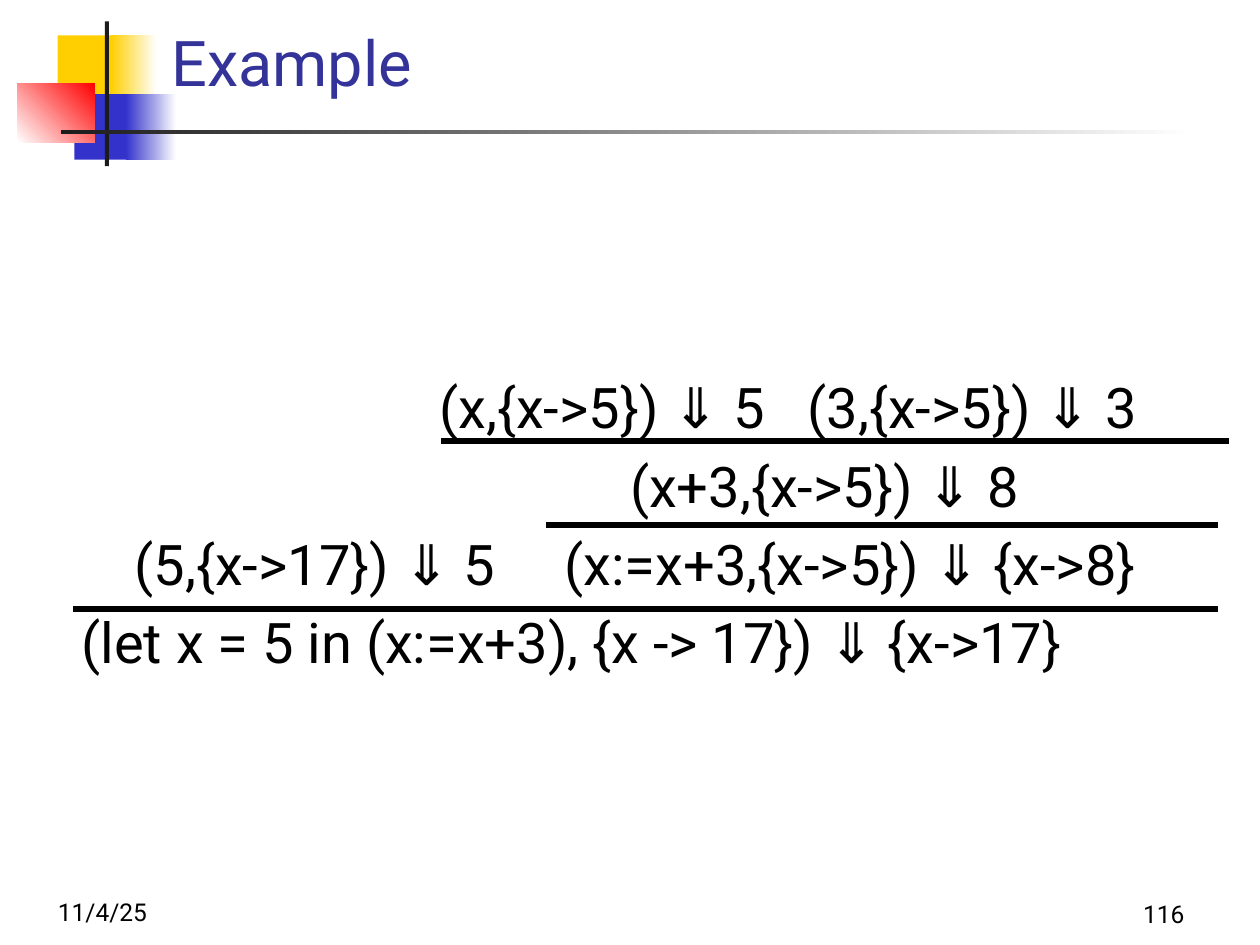
from lxml import etree
from pptx import Presentation
from pptx.dml.color import RGBColor
from pptx.enum.shapes import MSO_CONNECTOR, MSO_SHAPE
from pptx.enum.text import MSO_ANCHOR, MSO_AUTO_SIZE, PP_ALIGN
from pptx.oxml.ns import qn
from pptx.util import Pt

LINE = MSO_CONNECTOR.STRAIGHT
RECT = MSO_SHAPE.RECTANGLE
TOP, BOTTOM = MSO_ANCHOR.TOP, MSO_ANCHOR.BOTTOM
LEFT, RIGHT = PP_ALIGN.LEFT, PP_ALIGN.RIGHT
NO_FIT = MSO_AUTO_SIZE.NONE

FONT = "Roboto"
COLORS = {
    "yellow": "FFCF01", "blue": "3333CC", "red": "FF0000",
    "white": "FFFFFF", "dark": "1C1C1C", "title": "333399", "text": "000000",
}


def rgb(name):
    return RGBColor.from_string(COLORS[name])


def write(sp, text, size, color="text", anchor=BOTTOM, align=LEFT):
    tf = sp.text_frame
    tf.auto_size = NO_FIT
    tf.word_wrap = True
    tf.vertical_anchor = anchor
    p = tf.paragraphs[0]
    p.alignment = align
    r = p.add_run()
    r.text = text
    r.font.name = FONT
    r.font.size = Pt(size)
    r.font.color.rgb = rgb(color)
    return tf


def add_text(s, box, text, size, **style):
    sp = s.shapes.add_textbox(*map(Pt, box))
    return write(sp, text, size, **style)


def add_rect(s, box, start, end=None, angle=0):
    sp = s.shapes.add_shape(RECT, *map(Pt, box))
    sp.shadow.inherit = False
    sp.line.fill.background()
    if end is None:
        sp.fill.solid()
        sp.fill.fore_color.rgb = rgb(start)
        return
    sp.fill.gradient()
    sp.fill.gradient_angle = angle
    for stop, name in zip(sp.fill.gradient_stops, (start, end)):
        stop.color.rgb = rgb(name)


def add_ornament(s, x, y):
    add_rect(s, (x + 23, y + 8, 34.5, 37.4), "yellow")
    add_rect(s, (x + 53.5, y + 8, 26, 37.4), "yellow", "white")
    add_rect(s, (x + 32.5, y + 41.6, 33, 37.4), "blue")
    add_rect(s, (x + 62, y + 41.6, 28.8, 37.4), "blue", "white")
    add_rect(s, (x, y + 35.5, 44.3, 33.8), "white", "red", 45)
    add_rect(s, (x + 50, y, 2.2, 82.8), "dark")
    add_rect(s, (x + 24.8, y + 62, 648, 2.2), "dark", "white")


def add_title(s, x, y, w, h, text):
    sp = s.shapes.title
    sp.left, sp.top, sp.width, sp.height = map(Pt, (x, y, w, h))
    write(sp, text, 36, "title")


def add_footer(s, x, y, w, h, date, number):
    box_w = 150
    add_text(s, (x, y, box_w, h), date, 14)
    add_text(s, (x + w - box_w, y + 1.5, box_w, h), number, 14, align=RIGHT)


def add_rule(s, x1, x2, y):
    c = s.shapes.add_connector(LINE, Pt(x1), Pt(y), Pt(x2), Pt(y))
    c.line.width = Pt(3)
    c.line.color.rgb = rgb("text")
    etree.SubElement(c._element.spPr, qn("a:effectLst"))


def add_derivation(s, x, y, row_h, levels, rules):
    for i, level in enumerate(levels):
        for dx, w, judgement in level:
            box = (x + dx, y + i * row_h, w, row_h)
            tf = add_text(s, box, judgement, 32, anchor=TOP)
            tf.margin_left = tf.margin_right = 0
            tf.margin_top = tf.margin_bottom = 0
    for i, (x1, x2) in enumerate(rules):
        add_rule(s, x + x1, x + x2, y + 39 + i * 48)


def main():
    prs = Presentation()
    prs.slide_width, prs.slide_height = Pt(720), Pt(540)
    s = prs.slides.add_slide(prs.slide_layouts[5])
    add_ornament(s, 10, 12.2)
    add_title(s, 90.7, 13, 613.4, 47.5, "Example")
    levels = [
        [(209, 204, "(x,{x->5}) ⇓ 5"), (419.5, 206, "(3,{x->5}) ⇓ 3")],
        [(318, 240, "(x+3,{x->5}) ⇓ 8")],
        [(35, 225, "(5,{x->17}) ⇓ 5"),
         (280.5, 350, "(x:=x+3,{x->5}) ⇓ {x->8}")],
        [(4.5, 600, "(let x = 5 in (x:=x+3), {x -> 17}) ⇓ {x->17}")],
    ]
    rules = [(210, 660), (270, 654), (0, 654)]
    add_derivation(s, 42, 213, 44.8, levels, rules)
    add_footer(s, 26, 496.8, 658, 36, "11/4/25", "116")
    prs.save("out.pptx")


if __name__ == "__main__":
    main()
